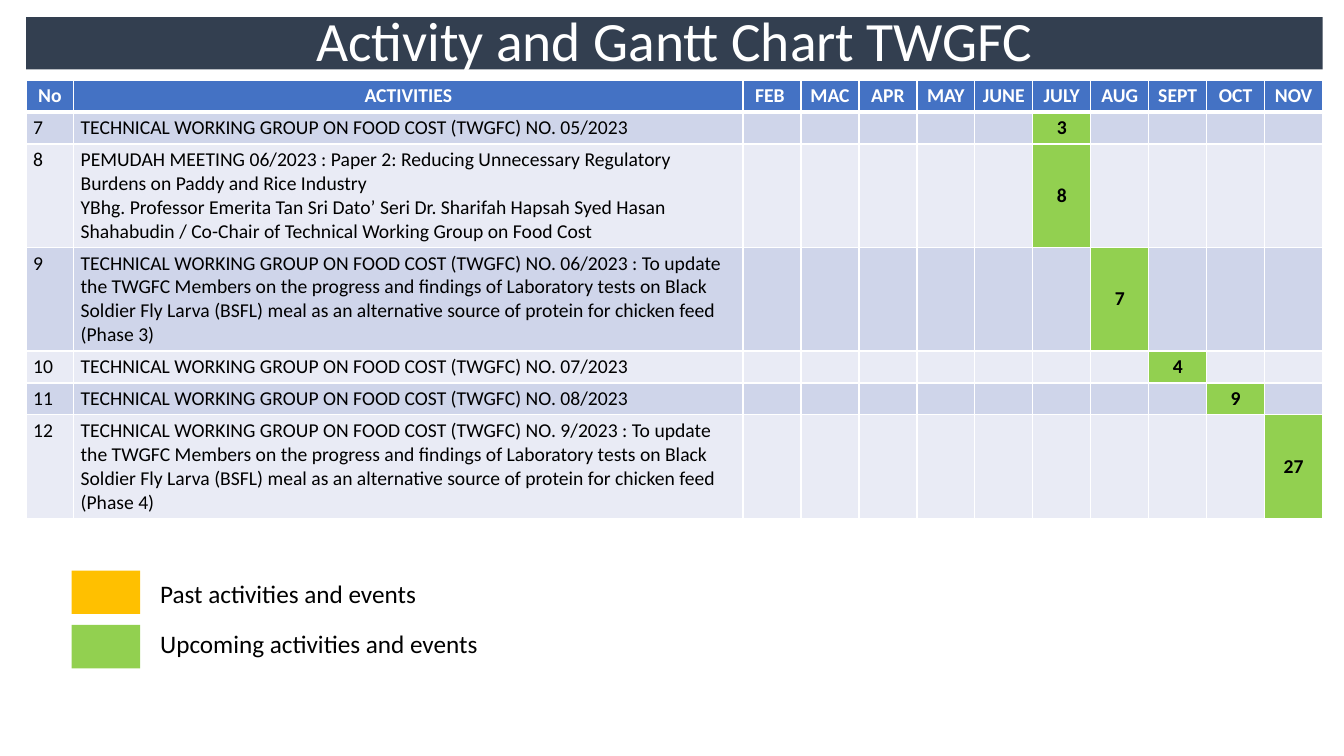
from dataclasses import dataclass

from lxml.etree import SubElement
from pptx import Presentation
from pptx.dml.color import RGBColor
from pptx.enum.shapes import MSO_SHAPE as Shape
from pptx.enum.text import MSO_ANCHOR as Anchor, MSO_AUTO_SIZE as AutoSize, PP_ALIGN as Align
from pptx.oxml.ns import qn
from pptx.util import Inches, Pt


@dataclass(frozen=True)
class Theme:
    font: str = "Calibri"
    banner: str = "333F50"
    header: str = "4472C4"
    bands: tuple = ("CFD5EA", "E9EBF5")
    past: str = "FFC000"
    upcoming: str = "92D050"
    light: str = "FFFFFF"
    dark: str = "000000"
    title_size: float = 39.6
    table_size: float = 14
    legend_size: float = 18
    thin: float = 1
    thick: float = 3


class SlideBuilder:
    """Places elements by percentages of the slide's width and height."""

    def __init__(self, deck, page, theme):
        self.deck, self.page, self.theme = deck, page, theme

    def across(self, share):
        return round(self.deck.slide_width * share / 100)

    def down(self, share):
        return round(self.deck.slide_height * share / 100)

    def frame(self, left, top, width, height):
        return self.across(left), self.down(top), self.across(width), self.down(height)

    def paint(self, item, color):
        item.fill.solid()
        item.fill.fore_color.rgb = RGBColor.from_string(color)

    def add_text(self, para, text, size, color, bold=False, align=Align.LEFT):
        para.alignment = align
        span = para.add_run()
        span.text = text
        font = span.font
        font.name, font.size, font.bold = self.theme.font, Pt(size), bold
        font.color.rgb = RGBColor.from_string(color)

    def title(self, text, *place):
        box = self.page.shapes.title
        box.left, box.top, box.width, box.height = self.frame(*place)
        self.paint(box, self.theme.banner)
        box.text_frame.vertical_anchor = Anchor.MIDDLE
        box.text_frame.auto_size = AutoSize.NONE
        para = box.text_frame.paragraphs[0]
        para.line_spacing = 0.9
        self.add_text(para, text, self.theme.title_size, self.theme.light, align=Align.CENTER)

    def swatch(self, color, *place):
        box = self.page.shapes.add_shape(Shape.RECTANGLE, *self.frame(*place))
        box.shadow.inherit = False
        box.line.fill.background()
        self.paint(box, color)

    def label(self, text, *place):
        box = self.page.shapes.add_textbox(*self.frame(*place))
        box.text_frame.word_wrap = False
        box.text_frame.auto_size = AutoSize.SHAPE_TO_FIT_TEXT
        para = box.text_frame.paragraphs[0]
        self.add_text(para, text, self.theme.legend_size, self.theme.dark)

    def table(self, left, top, widths, heights):
        place = self.frame(left, top, sum(widths), sum(heights))
        grid = self.page.shapes.add_table(len(heights), len(widths), *place).table
        grid.horz_banding = False
        for column, width in zip(grid.columns, widths):
            column.width = self.across(width)
        for row, height in zip(grid.rows, heights):
            row.height = self.down(height)
        return grid

    def borders(self, cell, top, bottom):
        properties = cell._tc.get_or_add_tcPr()
        sides = {"L": self.theme.thin, "R": self.theme.thin, "T": top, "B": bottom}
        for side, width in sides.items():
            line = SubElement(properties, qn(f"a:ln{side}"), w=str(Pt(width)))
            fill = SubElement(line, qn("a:solidFill"))
            SubElement(fill, qn("a:srgbClr"), val=self.theme.light)

    def cell(self, cell, lines, fill, color, bold=False, align=Align.LEFT,
             anchor=Anchor.TOP, top=Theme.thin, bottom=Theme.thin):
        cell.margin_left = cell.margin_right = Inches(0.07)
        cell.margin_top = cell.margin_bottom = Inches(0.04)
        cell.vertical_anchor = anchor
        self.borders(cell, top, bottom)
        self.paint(cell, fill)
        frame = cell.text_frame
        for index, text in enumerate(lines):
            para = frame.add_paragraph() if index else frame.paragraphs[0]
            self.add_text(para, text, self.theme.table_size, color, bold, align)
        if not lines:  # keeps empty cells from stretching the row
            size = str(round(self.theme.table_size * 100))
            SubElement(frame.paragraphs[0]._p, qn("a:endParaRPr"), sz=size)


MONTHS = ["FEB ", "MAC", "APR", "MAY", "JUNE", "JULY", "AUG", "SEPT", "OCT", "NOV"]
GROUP = "TECHNICAL WORKING GROUP ON FOOD COST (TWGFC) NO. "
UPDATE = (" : To update the TWGFC Members on the progress and findings of Laboratory tests "
          "on Black Soldier Fly Larva (BSFL) meal as an alternative source of protein "
          "for chicken feed (Phase {})")
PEMUDAH = [
    "PEMUDAH MEETING 06/2023 : Paper 2: Reducing Unnecessary Regulatory Burdens "
    "on Paddy and Rice Industry",
    "YBhg. Professor Emerita Tan Sri Dato’ Seri Dr. Sharifah Hapsah Syed Hasan "
    "Shahabudin / Co-Chair of Technical Working Group on Food Cost",
]
SHORT, TALL = 4.13, 13.7
# Number, text lines, month, day, row height
ACTIVITIES = [
    (7, [GROUP + "05/2023"], "JULY", 3, SHORT),
    (8, PEMUDAH, "JULY", 8, TALL),
    (9, [GROUP + "06/2023" + UPDATE.format(3)], "AUG", 7, TALL),
    (10, [GROUP + "07/2023"], "SEPT", 4, SHORT),
    (11, [GROUP + "08/2023"], "OCT", 9, SHORT),
    (12, [GROUP + "9/2023" + UPDATE.format(4)], "NOV", 27, TALL),
]
LEFT, WIDTH = 1.95, 96.47
NUMBER_WIDTH, ACTIVITY_WIDTH = 3.53, 49.81


def draw_gantt(builder):
    theme = builder.theme
    month_width = (WIDTH - NUMBER_WIDTH - ACTIVITY_WIDTH) / len(MONTHS)
    widths = [NUMBER_WIDTH, ACTIVITY_WIDTH] + [month_width] * len(MONTHS)
    grid = builder.table(LEFT, 10.6, widths, [SHORT] + [row[-1] for row in ACTIVITIES])

    # Header row
    for column, text in enumerate(["No", "ACTIVITIES"] + MONTHS):
        builder.cell(grid.cell(0, column), [text], theme.header, theme.light, bold=True,
                     align=Align.CENTER, bottom=theme.thick)

    # Activity rows
    for row, (number, lines, due, day, _) in enumerate(ACTIVITIES, start=1):
        band = theme.bands[(row - 1) % 2]
        top = theme.thick if row == 1 else theme.thin
        for column, content in enumerate([[str(number)], lines]):
            builder.cell(grid.cell(row, column), content, band, theme.dark, top=top)
        for column, month in enumerate(MONTHS, start=2):
            cell = grid.cell(row, column)
            if month == due:
                builder.cell(cell, [str(day)], theme.upcoming, theme.dark, bold=True,
                             align=Align.CENTER, anchor=Anchor.MIDDLE, top=top)
            else:
                builder.cell(cell, [], band, theme.dark, top=top)


def main():
    deck = Presentation()
    deck.slide_width, deck.slide_height = Inches(13.33), Inches(7.5)
    page = deck.slides.add_slide(deck.slide_layouts[5])
    theme = Theme()
    builder = SlideBuilder(deck, page, theme)

    # Title banner
    builder.title("Activity and Gantt Chart TWGFC", LEFT, 2.27, WIDTH, 6.93)

    # Gantt table
    draw_gantt(builder)

    # Legend
    legend = [("Past activities and events", theme.past, 21.23),
              ("Upcoming activities and events", theme.upcoming, 25.43)]
    for index, (text, color, width) in enumerate(legend):
        builder.swatch(color, 5.33, 75.47 + 7.2 * index, 5.1, 5.73)
        builder.label(text, 11.18, 75.87 + 6.53 * index, width, 5.33)

    deck.save("out.pptx")


if __name__ == "__main__":
    main()
